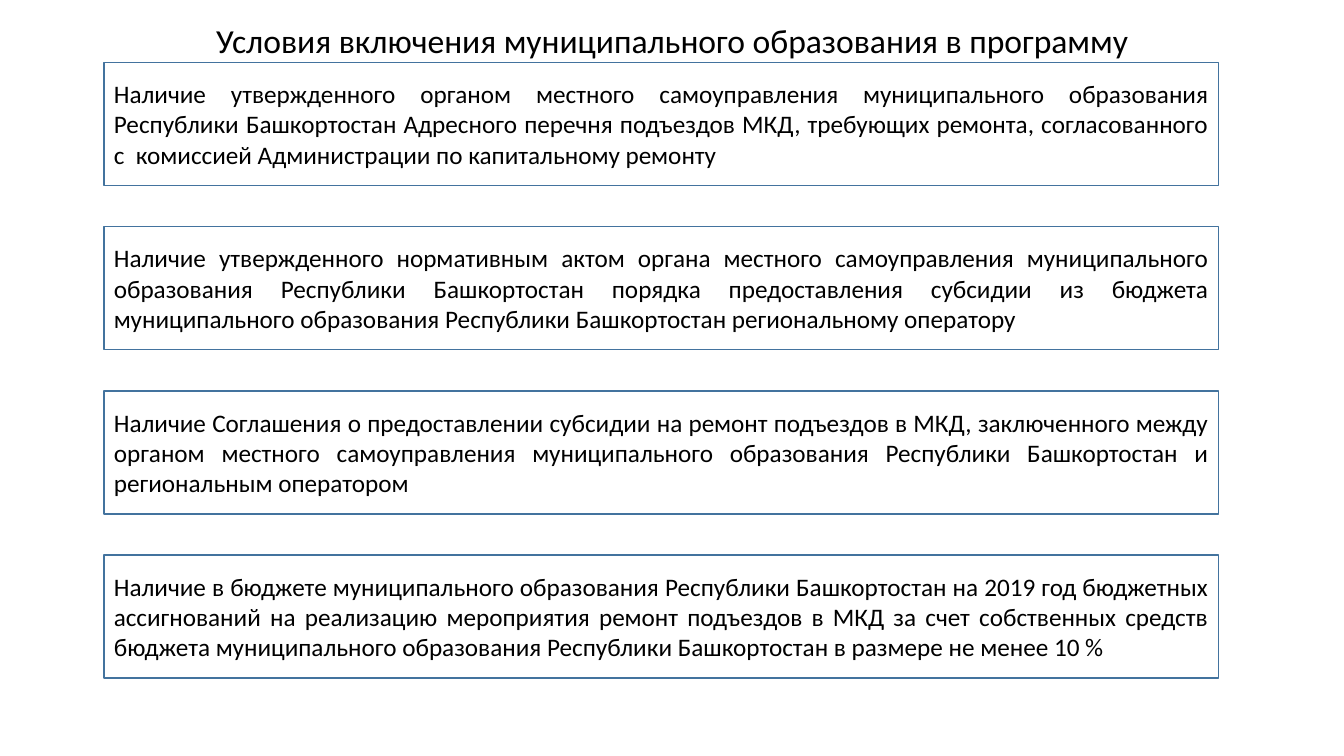
from dataclasses import dataclass

from pptx import Presentation
from pptx.dml.color import RGBColor
from pptx.enum.shapes import MSO_SHAPE
from pptx.enum.text import MSO_ANCHOR, PP_ALIGN
from pptx.shapes.autoshape import Shape
from pptx.slide import Slide
from pptx.util import Cm, Pt

LEFT, TOP, WIDTH, HEIGHT, STEP = 2.62, 1.57, 28.09, 3.1, 4.14
TITLE = "Условия включения муниципального образования в программу"
TERMS = [
    "Наличие утвержденного органом местного самоуправления муниципального "
    "образования Республики Башкортостан Адресного перечня подъездов МКД, "
    "требующих ремонта, согласованного с  комиссией Администрации "
    "по капитальному ремонту",
    "Наличие утвержденного нормативным актом органа местного самоуправления "
    "муниципального образования Республики Башкортостан порядка предоставления "
    "субсидии из бюджета муниципального образования Республики Башкортостан "
    "региональному оператору",
    "Наличие Соглашения о предоставлении субсидии на ремонт подъездов в МКД, "
    "заключенного между органом местного самоуправления муниципального "
    "образования Республики Башкортостан и региональным оператором",
    "Наличие в бюджете муниципального образования Республики Башкортостан "
    "на 2019 год бюджетных ассигнований на реализацию мероприятия ремонт "
    "подъездов в МКД за счет собственных средств бюджета муниципального "
    "образования Республики Башкортостан в размере не менее 10 %",
]


@dataclass
class Term:
    top: float
    text: str


def color(code: str) -> RGBColor:
    return RGBColor.from_string(code)


def apply(target: object, values: dict[str, object]) -> None:
    for name, value in values.items():
        setattr(target, name, value)


def write(shape: Shape, text: str, size: int, look: dict[str, object]) -> None:
    frame = shape.text_frame
    apply(frame, {"word_wrap": True, "vertical_anchor": MSO_ANCHOR.MIDDLE})
    para = frame.paragraphs[0]
    apply(para, look)
    run = para.add_run()
    run.text = text
    apply(run.font, {"name": "Calibri", "size": Pt(size)})
    run.font.color.rgb = color("000000")


def draw_title(slide: Slide) -> None:
    box = slide.shapes.add_textbox(Cm(2.34), Cm(0.58), Cm(29.21), Cm(0.99))
    write(box, TITLE, 24, {"alignment": PP_ALIGN.CENTER, "line_spacing": 0.9})


def draw_term(slide: Slide, term: Term) -> None:
    box = slide.shapes.add_shape(
        MSO_SHAPE.RECTANGLE, Cm(LEFT), Cm(term.top), Cm(WIDTH), Cm(HEIGHT)
    )
    box.shadow.inherit = False
    box.fill.background()
    box.line.color.rgb = color("43739E")
    box.line.width = Pt(1)
    write(box, term.text, 18, {"alignment": PP_ALIGN.JUSTIFY})


def main() -> None:
    deck = Presentation()
    apply(deck, {"slide_width": Cm(33.87), "slide_height": Cm(19.05)})
    slide = deck.slides.add_slide(deck.slide_layouts[6])
    draw_title(slide)
    for index, text in enumerate(TERMS):
        draw_term(slide, Term(TOP + index * STEP, text))
    deck.save("out.pptx")


if __name__ == "__main__":
    main()
